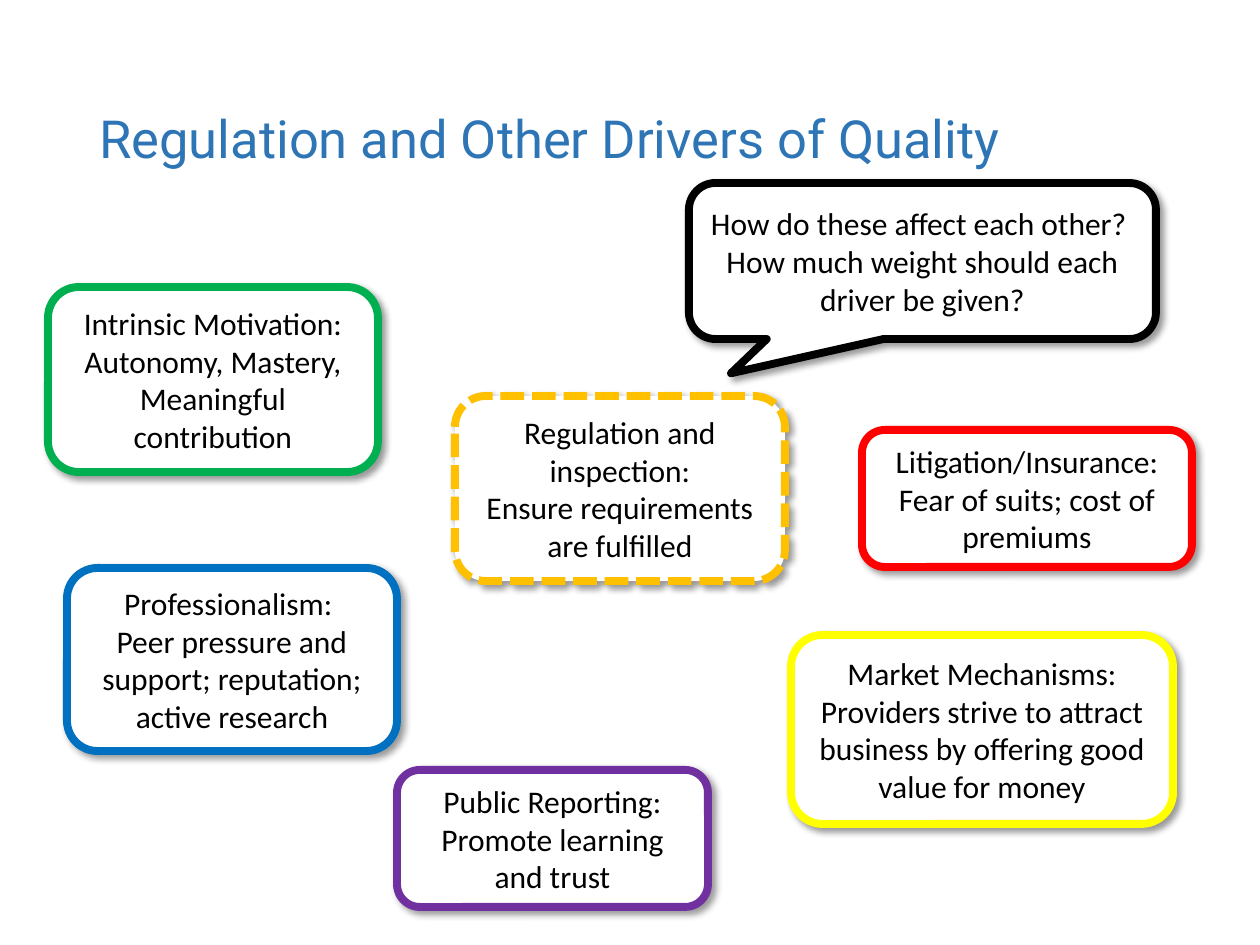
from lxml.etree import SubElement
from pptx import Presentation
from pptx.dml.color import RGBColor
from pptx.enum.dml import MSO_LINE
from pptx.enum.shapes import MSO_SHAPE
from pptx.enum.text import MSO_ANCHOR, PP_ALIGN
from pptx.oxml.ns import qn
from pptx.util import Inches, Pt

PX = Inches(1) / 126
COLORS = {
    "title": "2E75B6", "white": "FFFFFF", "black": "000000",
    "amber": "FFC000", "purple": "7030A0", "green": "00B050",
    "yellow": "FFFF00", "blue": "0070C0", "red": "FF0000",
}

# Outline colour, (left, top, width, height), driver, effect
DRIVERS = [
    ("amber", (455, 396, 330, 185), "Regulation and inspection:",
     "Ensure requirements are fulfilled"),
    ("purple", (397, 770, 311, 137), "Public Reporting:",
     "Promote learning and trust"),
    ("green", (48, 287, 330, 185), "Intrinsic Motivation:",
     "Autonomy, Mastery, Meaningful contribution"),
    ("yellow", (791, 635, 382, 189), "Market Mechanisms:",
     "Providers strive to attract business by offering good value for money"),
    ("blue", (67, 568, 330, 183), "Professionalism: ",
     "Peer pressure and support; reputation; active research"),
    ("red", (862, 430, 330, 137), "Litigation/Insurance:",
     "Fear of suits; cost of premiums"),
]


def emu(*lengths):
    return [round(length * PX) for length in lengths]


def color(name):
    return RGBColor.from_string(COLORS[name])


def write(frame, *lines, size=18, font="Calibri", ink="black",
          align=PP_ALIGN.CENTER, spacing=None):
    frame.word_wrap = True
    frame.vertical_anchor = MSO_ANCHOR.MIDDLE
    for index, line in enumerate(lines):
        para = frame.add_paragraph() if index else frame.paragraphs[0]
        para.alignment = align
        para.line_spacing = spacing
        span = para.add_run()
        span.text = line
        span.font.size = Pt(size)
        span.font.name = font
        span.font.color.rgb = color(ink)


def add_shadow(shape):
    """Soft black shadow, down and to the right."""
    shape.shadow.inherit = False
    effects = shape._element.spPr.find(qn("a:effectLst"))
    shadow = SubElement(effects, qn("a:outerShdw"), blurRad=str(Pt(4)),
                        dist=str(Pt(3)), dir=str(45 * 60000),
                        algn="tl", rotWithShape="0")
    black = SubElement(shadow, qn("a:srgbClr"), val=COLORS["black"])
    SubElement(black, qn("a:alpha"), val="40000")


def add_bubble(slide, outline, place, *lines,
               kind=MSO_SHAPE.ROUNDED_RECTANGLE, dash=None):
    bubble = slide.shapes.add_shape(kind, *emu(*place))
    bubble.fill.solid()
    bubble.fill.fore_color.rgb = color("white")
    bubble.line.color.rgb = color(outline)
    bubble.line.width = Pt(4.5)
    bubble.line.dash_style = dash
    add_shadow(bubble)
    write(bubble.text_frame, *lines)
    return bubble


def main():
    deck = Presentation()
    deck.slide_width, deck.slide_height = emu(1260, 945)
    slide = deck.slides.add_slide(deck.slide_layouts[6])

    # Title
    title = slide.shapes.add_textbox(*emu(87, 50, 1086, 183))
    write(title.text_frame, "Regulation and Other Drivers of Quality",
          size=30, font="Roboto", ink="title", align=PP_ALIGN.LEFT, spacing=0.9)

    # Drivers of quality; regulation, the topic, is dashed
    for outline, place, driver, effect in DRIVERS:
        dash = MSO_LINE.SQUARE_DOT if outline == "amber" else None
        add_bubble(slide, outline, place, driver, effect, dash=dash)

    # Question pointing at regulation
    question = add_bubble(slide, "black", (689, 183, 467, 156),
                          "How do these affect each other? ",
                          "How much weight should each driver be given?",
                          kind=MSO_SHAPE.ROUNDED_RECTANGULAR_CALLOUT)
    for index, value in enumerate((-0.41, 0.72, 0.17)):
        question.adjustments[index] = value

    deck.save("out.pptx")


if __name__ == "__main__":
    main()
